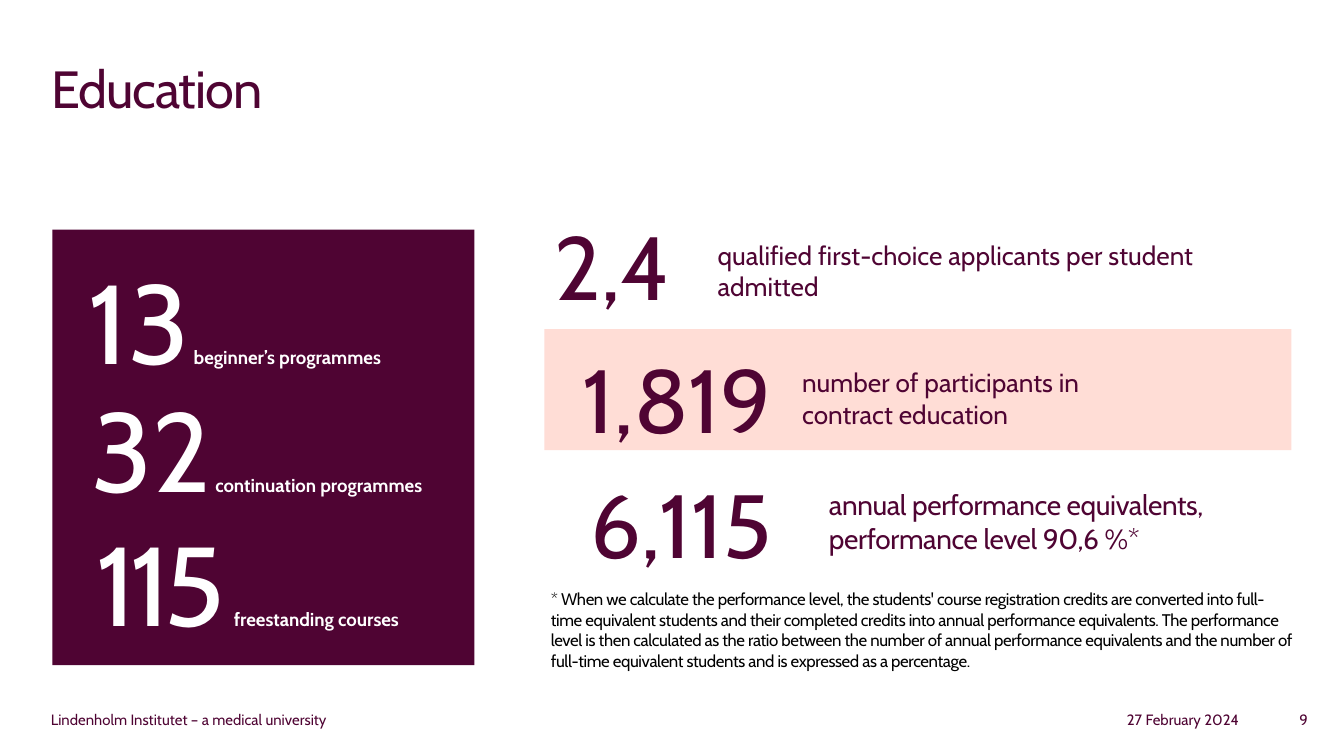
"""Build the Education key-figures slide."""
from dataclasses import dataclass

import pptx
import pptx.dml.color
import pptx.enum.shapes
import pptx.enum.text
import pptx.util

PX = 9144
PLUM, PINK, WHITE, BLACK = "4F0433", "FFDDD6", "FFFFFF", "000000"
ALIGN = pptx.enum.text.PP_ALIGN


@dataclass
class Box:
    """A rectangle in px, 100 to the inch."""
    left: int
    top: int
    width: int
    height: int

    def emu(self) -> list[int]:
        """Return the four lengths in EMU."""
        return [side * PX for side in (self.left, self.top, self.width, self.height)]


@dataclass
class Span:
    """A piece of text in one format."""
    text: str
    size: int
    colour: str = PLUM
    bold: bool = False
    spacing: int = 0
    font: str = "Cabin"


@dataclass
class Course:
    """A count and its caption on the dark panel."""
    box: Box
    count: str
    caption: str
    gap: int = 10
    spacing: int = 0


@dataclass
class Figure:
    """A key figure with its explanation."""
    number_box: Box
    number: list[Span]
    label_box: Box
    label: Span


@dataclass
class Footer:
    """A small text at the foot of the page."""
    box: Box
    text: str
    align: ALIGN


def rgb(colour: str) -> pptx.dml.color.RGBColor:
    """Turn a hex string into a colour."""
    return pptx.dml.color.RGBColor.from_string(colour)


def format_run(run, span: Span) -> None:
    """Give a run the format of a span."""
    run.font.name = span.font
    run.font.size = pptx.util.Pt(span.size)
    run.font.bold = span.bold
    run.font.color.rgb = rgb(span.colour)
    if span.spacing:
        run._r.get_or_add_rPr().set("spc", str(span.spacing))


def write(shape, spans: list[Span], align: ALIGN = ALIGN.LEFT):
    """Fill a shape with one paragraph and return it."""
    frame = shape.text_frame
    frame.word_wrap = True
    frame.auto_size = pptx.enum.text.MSO_AUTO_SIZE.NONE
    frame.vertical_anchor = pptx.enum.text.MSO_ANCHOR.TOP
    para = frame.paragraphs[0]
    para.alignment = align
    if len(spans) == 1:
        para.text = spans[0].text
        for run in para.runs:
            format_run(run, spans[0])
    else:
        for span in spans:
            run = para.add_run()
            run.text = span.text
            format_run(run, span)
    return para


def add_text(shapes, box: Box, spans: list[Span], align: ALIGN = ALIGN.LEFT):
    """Add a text box and return its paragraph."""
    return write(shapes.add_textbox(*box.emu()), spans, align)


def add_panel(shapes, box: Box, colour: str) -> None:
    """Add a plain filled rectangle."""
    panel = shapes.add_shape(pptx.enum.shapes.MSO_SHAPE.RECTANGLE, *box.emu())
    panel.shadow.inherit = False
    panel.fill.solid()
    panel.fill.fore_color.rgb = rgb(colour)
    panel.line.fill.background()


def add_course(shapes, course: Course) -> None:
    """Add a count followed by its caption."""
    add_text(shapes, course.box, [
        Span(course.count, 60, WHITE, spacing=course.spacing),
        Span(" ", course.gap, WHITE, True),
        Span(course.caption, 10, WHITE, True),
    ])


def add_figure(shapes, figure: Figure) -> None:
    """Add a key figure and its label as a group."""
    group = shapes.add_group_shape()
    add_text(group.shapes, figure.number_box, figure.number, ALIGN.CENTER)
    add_text(group.shapes, figure.label_box, [figure.label])


COURSES = [
    Course(Box(56, 183, 312, 111), "13", "beginner’s programmes"),
    Course(Box(58, 278, 319, 111), "32", "continuation programmes"),
    Course(Box(62, 378, 332, 111), "115", "freestanding courses", 20, -300),
]
FIGURES = [
    Figure(Box(350, 127, 236, 155),
           [Span("2,4", 48), Span(" ", 66, font="Montserrat")],
           Box(524, 173, 411, 57),
           Span("qualified first-choice applicants per student admitted", 14)),
    Figure(Box(386, 251, 236, 91), [Span("1,819", 48)],
           Box(587, 268, 500, 57),
           Span("number of participants in \ncontract education", 14)),
    Figure(Box(389, 344, 236, 91), [Span("6,115", 48)],
           Box(607, 358, 354, 61),
           Span("annual performance equivalents, \nperformance level 90,6 %*", 15,
                spacing=-20)),
]
FOOTNOTE = (
    "* When we calculate the performance level, the students' course registration "
    "credits are converted into full-time equivalent students and their completed "
    "credits into annual performance equivalents. The performance level is then "
    "calculated as the ratio between the number of annual performance equivalents "
    "and the number of full-time equivalent students and is expressed as a percentage."
)
FOOTERS = [
    Footer(Box(28, 524, 283, 19), "Lindenholm Institutet – a medical university", ALIGN.LEFT),
    Footer(Box(724, 524, 208, 19), "27 February 2024", ALIGN.RIGHT),
    Footer(Box(908, 524, 75, 19), "9", ALIGN.RIGHT),
]


def main() -> None:
    """Build and save the deck."""
    deck = pptx.Presentation()
    deck.slide_width = 1000 * PX
    deck.slide_height = deck.slide_width * 9 // 16
    page = deck.slides.add_slide(deck.slide_layouts[5])
    shapes = page.shapes

    title = shapes.title
    title.left, title.top, title.width, title.height = Box(28, 37, 944, 94).emu()
    write(title, [Span("Education", 28, spacing=-50)])

    add_panel(shapes, Box(39, 171, 314, 324), PLUM)
    for course in COURSES:
        add_course(shapes, course)

    add_panel(shapes, Box(405, 245, 556, 90), PINK)
    for figure in FIGURES:
        add_figure(shapes, figure)

    footnote = add_text(shapes, Box(400, 433, 572, 60),
                        [Span(FOOTNOTE, 9, BLACK, spacing=-20)])
    footnote.line_spacing = pptx.util.Pt(11)

    for footer in FOOTERS:
        add_text(shapes, footer.box, [Span(footer.text, 8)], footer.align)

    deck.save("out.pptx")


if __name__ == "__main__":
    main()
